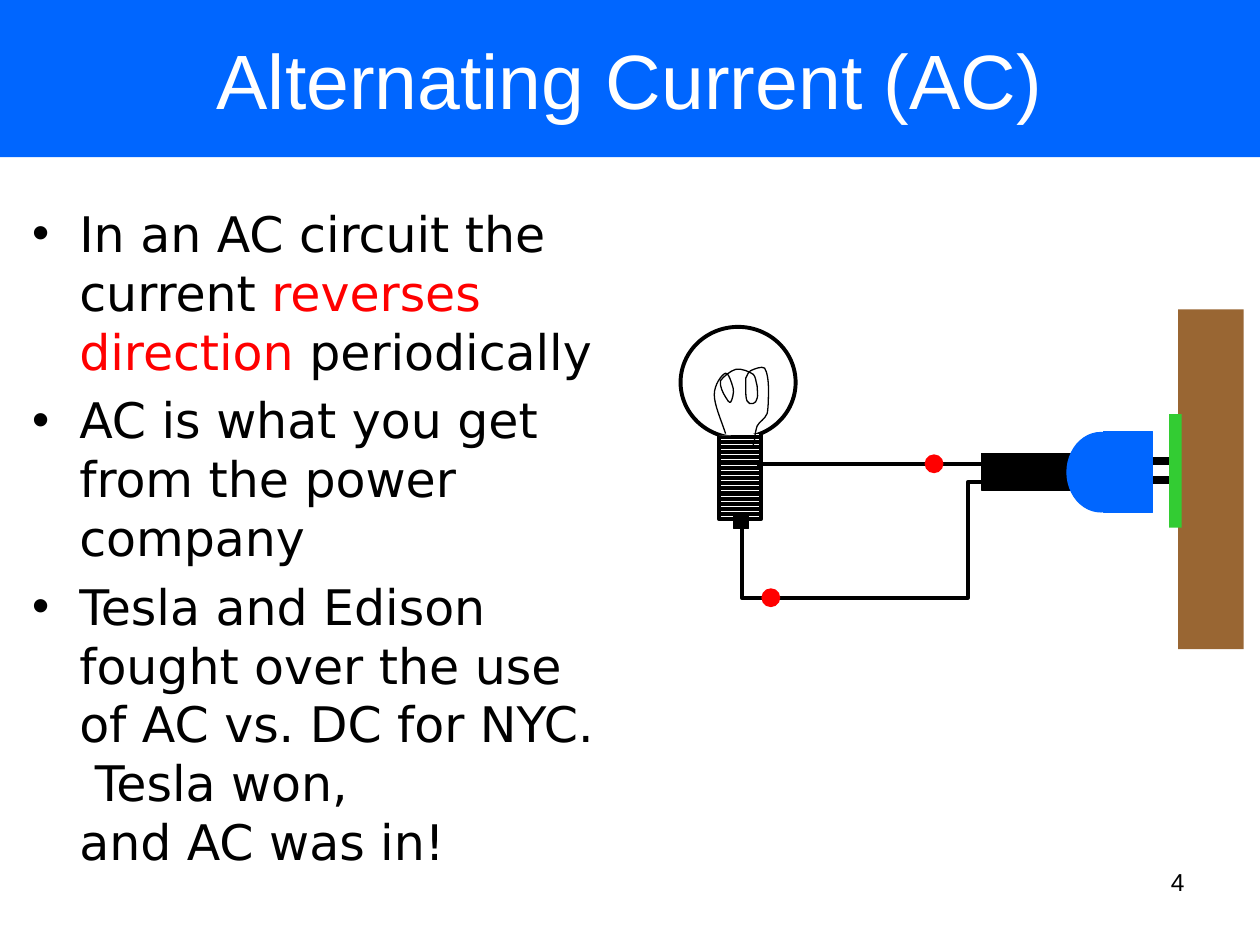
from lxml.etree import SubElement
from pptx import Presentation
from pptx.dml.color import RGBColor
from pptx.enum.dml import MSO_PATTERN
from pptx.enum.shapes import MSO_CONNECTOR, MSO_SHAPE
from pptx.enum.text import MSO_ANCHOR, MSO_AUTO_SIZE, PP_ALIGN
from pptx.oxml.ns import qn
from pptx.util import Cm, Pt

BLACK, WHITE, RED = "000000", "FFFFFF", "FF0000"
BLUE, BROWN, GREEN = "0066FF", "996633", "33CC33"

# A line feed inside a run is a line break
BULLETS = [
    [("In an AC circuit the current ", BLACK), ("reverses direction", RED),
     (" periodically", BLACK)],
    [("AC is what you get from the power company", BLACK)],
    [("Tesla and Edison fought over the use of AC vs. DC for NYC.  Tesla won,\nand AC was in!",
      BLACK)],
]

# Filament: Bezier start, then (control, control, end) in hundredths of an inch
FILAMENT_ORIGIN = (14.4, 7.37)
FILAMENT_START = (9, 54)
FILAMENT_CURVES = [
    ((5, 42), (0, 31), (0, 23)), ((0, 15), (6, 7), (9, 6)),
    ((11, 5), (14, 14), (15, 18)), ((16, 21), (14, 28), (13, 29)),
    ((12, 30), (10, 27), (9, 25)), ((7, 22), (4, 16), (5, 12)),
    ((7, 9), (13, 4), (17, 3)), ((22, 2), (28, 5), (31, 7)),
    ((33, 9), (33, 13), (34, 16)), ((34, 19), (35, 24), (34, 26)),
    ((34, 28), (32, 30), (31, 30)), ((29, 31), (27, 30), (26, 28)),
    ((25, 26), (25, 21), (25, 18)), ((25, 15), (25, 12), (25, 10)),
    ((26, 8), (27, 5), (29, 4)), ((31, 3), (38, 0), (40, 2)),
    ((42, 5), (43, 12), (43, 18)), ((43, 24), (43, 33), (42, 38)),
    ((40, 43), (36, 44), (34, 48)), ((33, 51), (32, 56), (32, 59)),
    ((31, 61), (31, 62), (31, 63)),
]


def rgb(value):
    return RGBColor.from_string(value)


def place(item, left, top, width, height):
    box = {"left": left, "top": top, "width": width, "height": height}
    for name, value in box.items():
        setattr(item, name, Cm(value))


def add_run(paragraph, text, size, font, color):
    for index, line in enumerate(text.split("\n")):
        if index:
            paragraph.add_line_break()
        run = paragraph.add_run()
        run.text = line
        for name, value in {"size": Pt(size), "name": font}.items():
            setattr(run.font, name, value)
        run.font.color.rgb = rgb(color)


def set_line(item, color, width):
    if color is None:
        item.line.fill.background()
    else:
        item.line.color.rgb = rgb(color)
        item.line.width = Pt(width)


def add_part(shapes, kind, box, fill, line=None, width=0.75):
    part = shapes.add_shape(kind, *map(Cm, box))
    part.shadow.inherit = False
    part.fill.solid()
    part.fill.fore_color.rgb = rgb(fill)
    set_line(part, line, width)


def add_wire(shapes, start, end, width):
    wire = shapes.add_connector(MSO_CONNECTOR.STRAIGHT, *map(Cm, start + end))
    set_line(wire, BLACK, width)
    SubElement(wire.line._get_or_add_ln().getparent(), qn("a:effectLst"))


def add_outline(shapes, points, width):
    first, *rest = [(Cm(x), Cm(y)) for x, y in points]
    builder = shapes.build_freeform(*first)
    builder.add_line_segments(rest, close=False)
    outline = builder.convert_to_shape()
    outline.shadow.inherit = False
    outline.fill.background()
    set_line(outline, BLACK, width)
    return outline


def filament_point(point):
    return tuple(origin + step * 2.54 / 100
                 for origin, step in zip(FILAMENT_ORIGIN, point))


def add_filament(shapes):
    ends = [FILAMENT_START] + [curve[-1] for curve in FILAMENT_CURVES]
    filament = add_outline(shapes, map(filament_point, ends), 0.75)
    # Turn each straight segment into a curve with its two control points
    segments = list(filament._element.iter(qn("a:lnTo")))
    for segment, (first, second, _) in zip(segments, FILAMENT_CURVES):
        segment.tag = qn("a:cubicBezTo")
        for index, control in enumerate((first, second)):
            x, y = map(Cm, filament_point(control))
            point = SubElement(segment, qn("a:pt"),
                               x=str(x - filament.left), y=str(y - filament.top))
            segment.insert(index, point)


def add_title(slide):
    title = slide.shapes.title
    place(title, 0, 0, 25.4, 3.17)
    title.fill.solid()
    title.fill.fore_color.rgb = rgb(BLUE)
    frame = title.text_frame
    frame.auto_size = MSO_AUTO_SIZE.NONE
    frame.vertical_anchor = MSO_ANCHOR.MIDDLE
    frame.paragraphs[0].alignment = PP_ALIGN.CENTER
    add_run(frame.paragraphs[0], "Alternating Current (AC)", 44, "Arial", WHITE)


def add_bullets(slide):
    frame = slide.shapes.add_textbox(Cm(0.4), Cm(3.98), Cm(12.09), Cm(14.1)).text_frame
    frame.word_wrap = True
    for index, runs in enumerate(BULLETS):
        paragraph = frame.add_paragraph() if index else frame.paragraphs[0]
        paragraph.space_before = Pt(5.6)
        properties = paragraph._p.get_or_add_pPr()
        for name, value in {"marL": Cm(0.95), "indent": -Cm(0.95)}.items():
            properties.set(name, str(value))
        SubElement(properties, qn("a:buFont"), typeface="Arial")
        SubElement(properties, qn("a:buChar"), char="•")
        for text, color in runs:
            add_run(paragraph, text, 28, "DejaVu Sans", color)


def add_page_number(slide):
    frame = slide.shapes.add_textbox(Cm(18.21), Cm(17.35), Cm(5.92), Cm(1.32)).text_frame
    frame.word_wrap = True
    frame.paragraphs[0].alignment = PP_ALIGN.RIGHT
    add_run(frame.paragraphs[0], "4", 14, "Arial", BLACK)


def add_bulb(shapes):
    add_part(shapes, MSO_SHAPE.OVAL, (13.72, 6.59, 2.32, 2.24), WHITE, BLACK, 2.25)
    # Threaded base
    base = add_outline(
        shapes, [(14.49, 8.79), (14.49, 10.46), (15.35, 10.46), (15.35, 8.74)], 2.25)
    base.fill.patterned()
    base.fill.pattern = MSO_PATTERN.DARK_HORIZONTAL
    base.fill.fore_color.rgb = rgb(BLACK)
    base.fill.back_color.rgb = rgb(WHITE)
    # Contact and filament
    add_part(shapes, MSO_SHAPE.RECTANGLE, (14.79, 10.37, 0.3, 0.28), BLACK, BLACK)
    add_filament(shapes)


def add_circuit(slide):
    shapes = slide.shapes.add_group_shape().shapes
    # Cord, bulb and plug
    add_part(shapes, MSO_SHAPE.RECTANGLE, (19.79, 9.14, 2.11, 0.74), BLACK, BLACK)
    add_bulb(shapes)
    for prong_y in (9.3, 9.68):
        add_wire(shapes, (22.96, prong_y), (23.72, prong_y), 4.5)
    add_part(shapes, MSO_SHAPE.OVAL, (21.51, 8.72, 1.37, 1.6), BLUE, BLUE)
    add_part(shapes, MSO_SHAPE.RECTANGLE, (22.25, 8.7, 0.99, 1.63), BLUE, BLUE)
    # Wires, wall and outlet
    add_wire(shapes, (19.86, 9.36), (15.27, 9.36), 2.25)
    add_part(shapes, MSO_SHAPE.RECTANGLE, (23.75, 6.24, 1.32, 6.85), BROWN)
    add_outline(shapes, [(14.95, 10.62), (14.95, 12.05), (19.51, 12.05),
                         (19.51, 9.72), (20.04, 9.72)], 2.25)
    add_part(shapes, MSO_SHAPE.RECTANGLE, (23.57, 8.35, 0.25, 2.29), GREEN)
    # Moving charges
    for left, top in ((18.64, 9.16), (15.35, 11.86)):
        add_part(slide.shapes, MSO_SHAPE.OVAL, (left, top, 0.38, 0.38), RED)


def main():
    deck = Presentation()
    deck.slide_width, deck.slide_height = Cm(25.4), Cm(19.05)
    slide = deck.slides.add_slide(deck.slide_layouts[5])
    add_page_number(slide)
    add_title(slide)
    add_bullets(slide)
    add_circuit(slide)
    deck.save("out.pptx")


if __name__ == "__main__":
    main()
